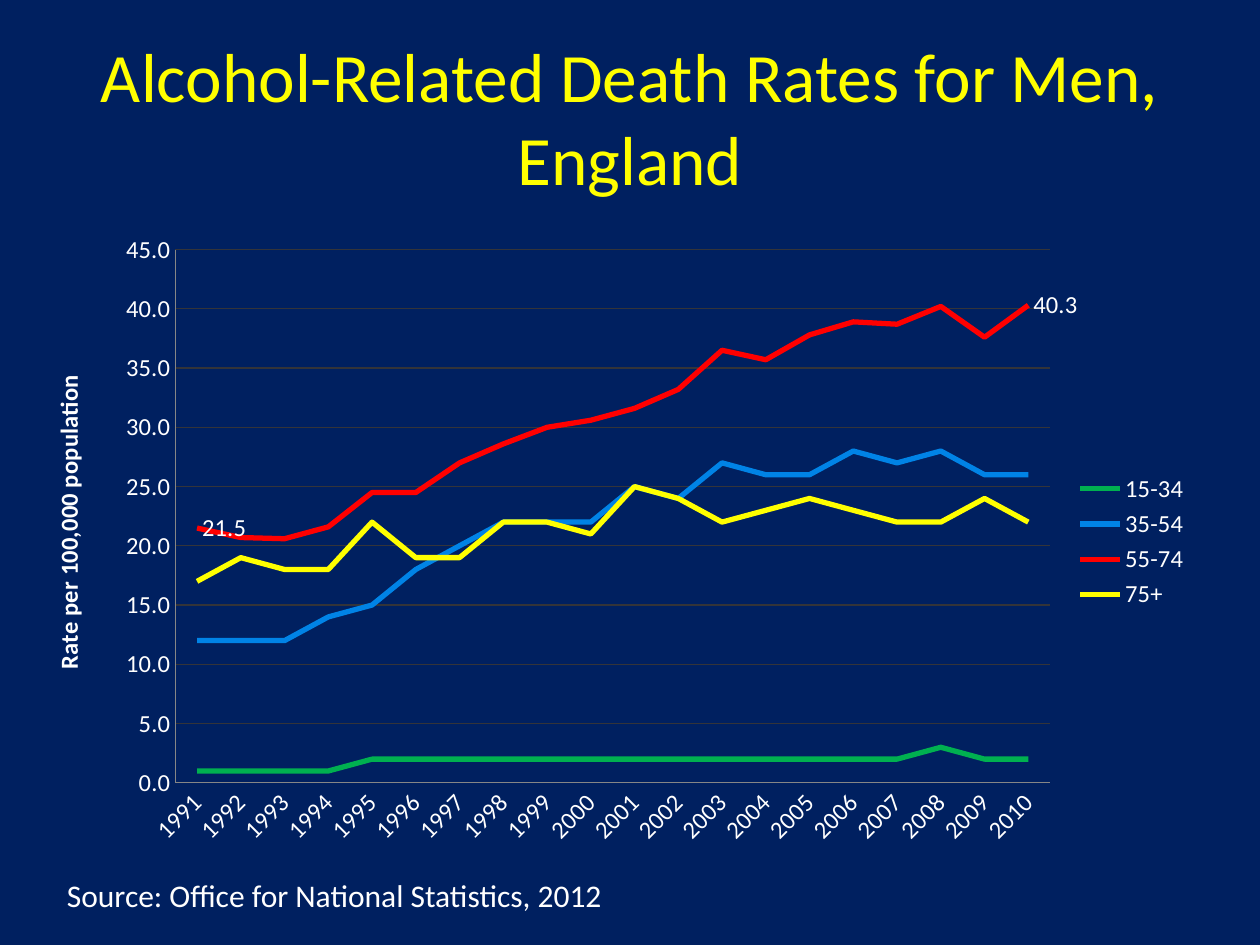
from lxml.etree import SubElement as Sub
from pptx import Presentation as Deck
from pptx.chart.data import CategoryChartData as Data
from pptx.dml.color import RGBColor as Rgb
from pptx.enum.chart import XL_CHART_TYPE as Kind, XL_LABEL_POSITION as Spot
from pptx.enum.chart import XL_LEGEND_POSITION as Side, XL_TICK_MARK as Tick
from pptx.enum.text import MSO_ANCHOR as Anchor, MSO_AUTO_SIZE as Auto, PP_ALIGN as Align
from pptx.oxml.ns import qn
from pptx.util import Cm, Pt

FACE = "Calibri"
WHITE = "FFFFFF"
YELLOW = "FFFF00"
YEARS = [str(year) for year in range(1991, 2011)]
RATES = {
    "15-34": ("00B050", [1, 1, 1, 1, 2, 2, 2, 2, 2, 2,
                         2, 2, 2, 2, 2, 2, 2, 3, 2, 2]),
    "35-54": ("0083E6", [12, 12, 12, 14, 15, 18, 20, 22, 22, 22,
                         25, 24, 27, 26, 26, 28, 27, 28, 26, 26]),
    "55-74": ("FF0000", [21.5, 20.7, 20.6, 21.6, 24.5, 24.5, 27, 28.6, 30, 30.6,
                         31.6, 33.2, 36.5, 35.7, 37.8, 38.9, 38.7, 40.2, 37.6, 40.3]),
    "75+": (YELLOW, [17, 19, 18, 18, 22, 19, 19, 22, 22, 21,
                     25, 24, 22, 23, 24, 23, 22, 22, 24, 22]),
}


def tint(code):
    return Rgb.from_string(code)


def style(font, size, code, bold=False):
    font.name = FACE
    font.size = Pt(size)
    font.bold = bold
    font.color.rgb = tint(code)


def stroke(line, code, width):
    line.color.rgb = tint(code)
    line.width = Pt(width)


def add_title(slide, left, top, width, height):
    title = slide.shapes.title
    title.left, title.top, title.width, title.height = left, top, width, height
    frame = title.text_frame
    frame.text = "Alcohol-Related Death Rates for Men, England"
    frame.vertical_anchor = Anchor.MIDDLE
    frame.word_wrap = True
    frame.auto_size = Auto.NONE
    para = frame.paragraphs[0]
    para.alignment = Align.CENTER
    style(para.runs[0].font, 39.6, YELLOW)


def place(item, index, **box):
    for old in item.findall(qn("c:layout")):
        item.remove(old)
    layout = item.makeelement(qn("c:layout"))
    item.insert(index, layout)
    manual = Sub(layout, qn("c:manualLayout"))
    for name, value in box.items():
        Sub(manual, qn("c:" + name)).set("val", str(value))


def set_axes(chart):
    years, rates = chart.category_axis, chart.value_axis
    for axis in (years, rates):
        axis.major_tick_mark = axis.minor_tick_mark = Tick.NONE
        stroke(axis.format.line, "868686", 0.75)
        style(axis.tick_labels.font, 14, WHITE)
    turn = years._element.find(qn("c:txPr")).find(qn("a:bodyPr"))
    turn.set("rot", "-2700000")
    rates.minimum_scale, rates.maximum_scale, rates.major_unit = 0, 45, 5
    rates.has_major_gridlines = True
    stroke(rates.major_gridlines.format.line, "343439", 0.75)
    rates.tick_labels.number_format = "0.0"
    rates.tick_labels.number_format_is_linked = False
    title = rates.axis_title
    title.text_frame.text = "Rate per 100,000 population"
    style(title.text_frame.paragraphs[0].runs[0].font, 14, WHITE, True)
    place(title._element, 1, xMode="edge", yMode="edge", x=0.01, y=0.23)


def label_ends(series):
    series.data_labels.show_value = False
    for index in (0, len(YEARS) - 1):
        label = series.points[index].data_label
        style(label.font, 14, WHITE)
        label.position = Spot.RIGHT


def add_rates(slide, left, top, width, height):
    data = Data(number_format="0.0")
    data.categories = YEARS
    for name, (code, values) in RATES.items():
        data.add_series(name, values)
    chart = slide.shapes.add_chart(Kind.LINE, left, top, width, height, data).chart
    style(chart.font, 14, WHITE)
    chart.has_title = False
    chart.has_legend = True
    chart.legend.position = Side.RIGHT
    chart.legend.include_in_layout = False
    chart.plots[0].vary_by_categories = False
    for series in chart.plots[0].series:
        series.smooth = False
        stroke(series.format.line, RATES[series.name][0], 3)
        if series.name == "55-74":
            label_ends(series)
    set_axes(chart)
    area = chart._chartSpace.find(".//" + qn("c:plotArea"))
    place(area, 0, layoutTarget="inner", xMode="edge", yMode="edge",
          x=0.12, y=0.04, w=0.75, h=0.84)


def add_source(slide, left, top, width, height):
    frame = slide.shapes.add_textbox(left, top, width, height).text_frame
    frame.text = "Source: Office for National Statistics, 2012"
    frame.word_wrap = False
    frame.auto_size = Auto.SHAPE_TO_FIT_TEXT
    style(frame.paragraphs[0].runs[0].font, 18, WHITE)


def main():
    deck = Deck()
    deck.slide_width, deck.slide_height = Cm(25.4), Cm(19.05)
    slide = deck.slides.add_slide(deck.slide_layouts[5])
    fill = slide.background.fill
    fill.solid()
    fill.fore_color.rgb = tint("002060")
    add_title(slide, Cm(1.27), Cm(0.76), Cm(22.86), Cm(3.18))
    add_rates(slide, Cm(0.71), Cm(4.52), Cm(23.52), Cm(12.8))
    add_source(slide, Cm(1.1), Cm(17.53), Cm(11.43), Cm(1.02))
    deck.save("out.pptx")


if __name__ == "__main__":
    main()
